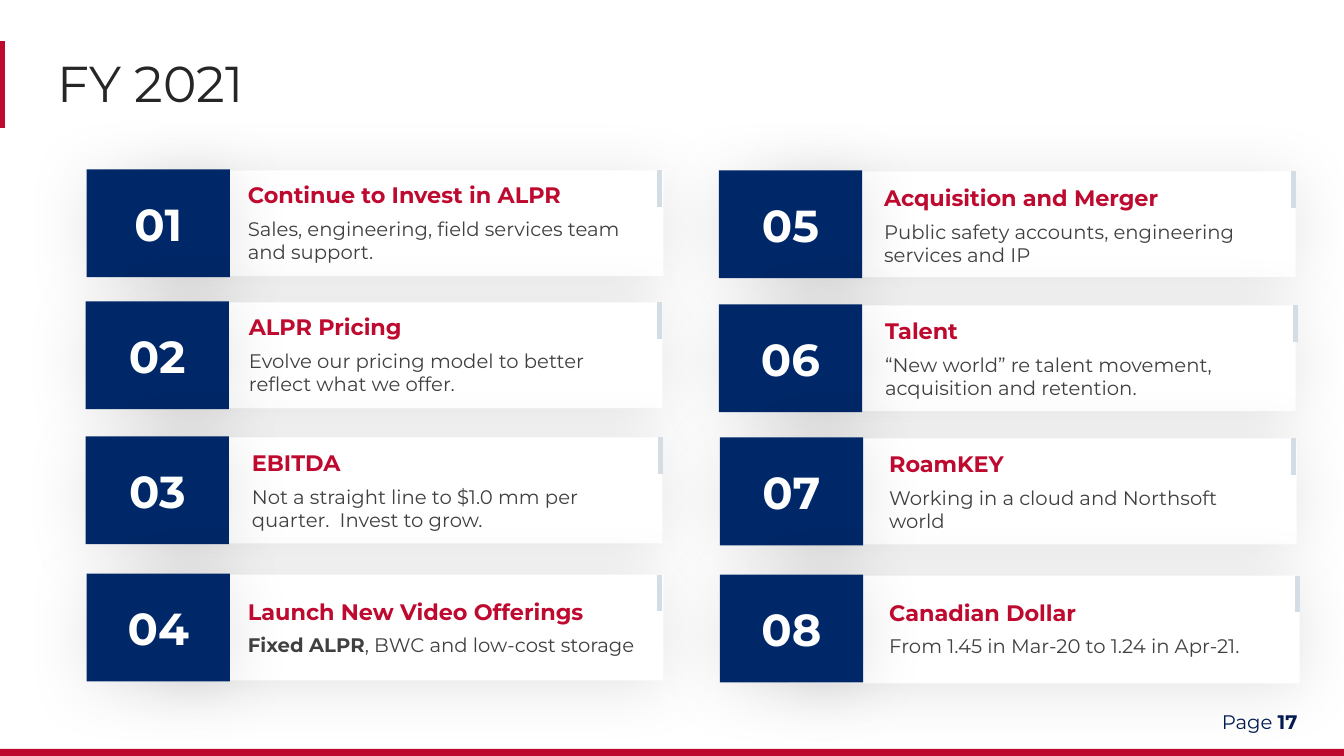
"""Build the FY 2021 slide of eight numbered cards."""
from dataclasses import dataclass

import pptx
import pptx.dml.color
import pptx.enum.shapes
import pptx.enum.text
import pptx.oxml
import pptx.oxml.ns
import pptx.oxml.xmlchemy
import pptx.shapes.autoshape
import pptx.shapes.connector
import pptx.slide
import pptx.text.text
import pptx.util

Inches = pptx.util.Inches
Pt = pptx.util.Pt
ANCHOR = pptx.enum.text.MSO_ANCHOR
ALIGN = pptx.enum.text.PP_ALIGN
FIT = pptx.enum.text.MSO_AUTO_SIZE.SHAPE_TO_FIT_TEXT
FONT = "Montserrat"
COLORS = {
    "red": "BF0A30", "navy": "002868", "white": "FFFFFF", "tick": "D5DDE4",
    "title": "262626", "body": "404040", "page": "021B52",
}
SHADE = (
    '<a:outerShdw xmlns:a="http://schemas.openxmlformats.org/drawingml/2006/main" '
    'blurRad="584200" dist="50800" dir="5400000" algn="t" rotWithShape="0">'
    '<a:srgbClr val="000000"><a:alpha val="11000"/></a:srgbClr></a:outerShdw>'
)


@dataclass(frozen=True)
class Card:
    """Hold the words and place of one card."""
    head: str
    body: str
    left: float
    top: float
    text_x: float
    text_y: float
    text_w: float
    tick_x: float
    lead: str = ""
    end: float = 5.72
    high: float = 1.05


CARDS = [
    Card("Continue to Invest in ALPR",
         "Sales, engineering, field services team and support.",
         0.86, 1.68, 2.36, 1.75, 3.9, 6.54),
    Card("ALPR Pricing",
         "Evolve our pricing model to better reflect what we offer.",
         0.85, 2.99, 2.37, 3.06, 3.89, 6.54),
    Card("EBITDA",
         "Not a straight line to $1.0 mm per quarter.  Invest to grow.",
         0.85, 4.33, 2.4, 4.41, 3.86, 6.55),
    Card("Launch New Video Offerings", ", BWC and low-cost storage",
         0.86, 5.69, 2.36, 5.88, 4.18, 6.54, lead="Fixed ALPR"),
    Card("Acquisition and Merger",
         "Public safety accounts, engineering services and IP",
         7.13, 1.69, 8.67, 1.78, 3.81, 12.83),
    Card("Talent",
         "“New world” re talent movement, acquisition and retention.",
         7.13, 3.02, 8.68, 3.1, 3.87, 12.85),
    Card("RoamKEY", "Working in a cloud and Northsoft world",
         7.14, 4.34, 8.72, 4.42, 3.82, 12.83),
    Card("Canadian Dollar", "From 1.45 in Mar-20 to 1.24 in Apr-21.",
         7.14, 5.7, 8.72, 5.89, 3.87, 12.87, end=5.75, high=1.07),
]


def tint(name: str) -> pptx.dml.color.RGBColor:
    """Return a named colour."""
    return pptx.dml.color.RGBColor.from_string(COLORS[name])


def style(run: pptx.text.text._Run, size: float, color: str, bold: bool = False) -> None:
    """Set the font of a run."""
    run.font.name = FONT
    run.font.size = Pt(size)
    run.font.bold = bold
    run.font.color.rgb = tint(color)


def add_rect(slide: pptx.slide.Slide, left: float, top: float, width: float,
             height: float, color: str, shade: bool = True) -> pptx.shapes.autoshape.Shape:
    """Draw a plain rectangle, with a soft shadow if asked."""
    rect = slide.shapes.add_shape(
        pptx.enum.shapes.MSO_SHAPE.RECTANGLE,
        Inches(left), Inches(top), Inches(width), Inches(height))
    rect.fill.solid()
    rect.fill.fore_color.rgb = tint(color)
    rect.line.fill.background()
    rect.shadow.inherit = False
    if shade:
        effects = rect._element.spPr.find(pptx.oxml.ns.qn("a:effectLst"))
        effects.append(pptx.oxml.parse_xml(SHADE))
    return rect


def add_bar(slide: pptx.slide.Slide, left: float, top: float, height: float,
            color: str) -> pptx.shapes.connector.Connector:
    """Draw a thick upright line."""
    bar = slide.shapes.add_connector(
        pptx.enum.shapes.MSO_CONNECTOR.STRAIGHT,
        Inches(left), Inches(top + height), Inches(left), Inches(top))
    bar.line.color.rgb = tint(color)
    bar.line.width = Pt(4)
    bar._element.spPr.append(pptx.oxml.xmlchemy.OxmlElement("a:effectLst"))
    return bar


def add_text(slide: pptx.slide.Slide, left: float, top: float, width: float,
             height: float) -> pptx.text.text.TextFrame:
    """Add a wrapping text box and return its frame."""
    box = slide.shapes.add_textbox(
        Inches(left), Inches(top), Inches(width), Inches(height))
    box.text_frame.word_wrap = True
    return box.text_frame


def add_card(slide: pptx.slide.Slide, card: Card, num: int) -> None:
    """Draw the panel, number block, words and tick of a card."""
    inset = 0.68
    add_rect(slide, card.left + inset, card.top + 0.01, card.end - inset,
             card.high, "white")
    block = add_rect(slide, card.left, card.top, 1.42, 1.07, "navy")
    frame = block.text_frame
    frame.margin_left = frame.margin_right = Inches(0.2)
    frame.margin_top = frame.margin_bottom = Inches(0.2)
    frame.vertical_anchor = ANCHOR.MIDDLE
    frame.text = f"{num:02}"
    frame.paragraphs[0].alignment = ALIGN.CENTER
    style(frame.paragraphs[0].runs[0], 32, "white", True)

    words = add_text(slide, card.text_x, card.text_y, card.text_w,
                     0.69 if card.text_y - card.top > 0.15 else 0.93)
    words.auto_size = FIT
    words.text = card.head
    style(words.paragraphs[0].runs[0], 16, "red", True)
    para = words.add_paragraph()
    para.space_before = Pt(6)
    if card.lead:
        para.text = card.lead
        style(para.runs[0], 14, "body", True)
    rest = para.add_run()
    rest.text = card.body
    style(rest, 14, "body")
    add_bar(slide, card.tick_x, card.top + 0.01, 0.36, "tick")


def add_title(slide: pptx.slide.Slide) -> None:
    """Place and fill the title."""
    title = slide.shapes.title
    title.left, title.top = Inches(0.47), Inches(0.53)
    title.width, title.height = Inches(12.4), Inches(0.65)
    frame = title.text_frame
    frame.text = "FY 2021"
    frame.auto_size = FIT
    frame.vertical_anchor = ANCHOR.MIDDLE
    para = frame.paragraphs[0]
    para.alignment = ALIGN.LEFT
    para.line_spacing = 0.9
    style(para.runs[0], 36, "title")


def add_page(slide: pptx.slide.Slide) -> None:
    """Add the page mark."""
    frame = add_text(slide, 12.02, 6.87, 1.3, 0.58)
    frame.vertical_anchor = ANCHOR.MIDDLE
    frame.text = "Page "
    para = frame.paragraphs[0]
    style(para.runs[0], 14, "page")
    num = para.add_run()
    num.text = "17"
    style(num, 14, "page", True)


def main() -> None:
    """Build and save the deck."""
    deck = pptx.Presentation()
    deck.slide_width, deck.slide_height = Inches(13.33), Inches(7.5)
    slide = deck.slides.add_slide(deck.slide_layouts.get_by_name("Title Only"))
    add_rect(slide, 0, 7.43, 13.33, 0.07, "red", shade=False)
    add_bar(slide, 0.02, 0.41, 0.86, "red")
    add_title(slide)
    for num, card in enumerate(CARDS, 1):
        add_card(slide, card, num)
    add_page(slide)
    deck.save("out.pptx")


if __name__ == "__main__":
    main()
